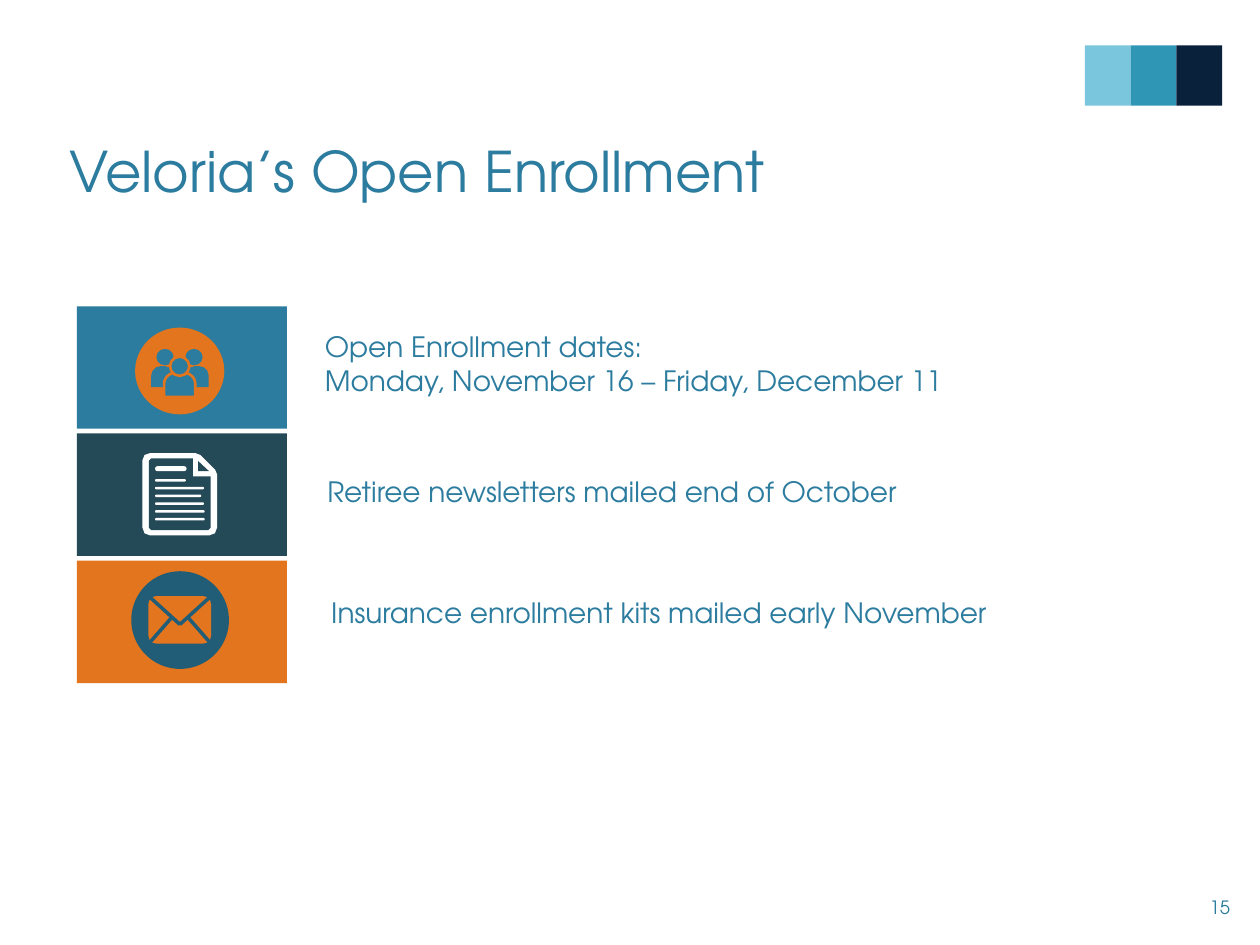
from pptx import Presentation
from pptx.dml.color import RGBColor
from pptx.enum.shapes import MSO_CONNECTOR, MSO_SHAPE
from pptx.enum.text import MSO_ANCHOR, PP_ALIGN
from pptx.oxml.ns import qn
from pptx.util import Pt
from lxml import etree

HUE = {
    "sky": "7AC6DC", "teal": "2F97B5", "navy": "09213B", "blue": "2C7C9F",
    "slate": "244A58", "orange": "E2751D", "deep": "215D77", "white": "FFFFFF",
}
COLOR = {name: RGBColor.from_string(code) for name, code in HUE.items()}

deck = Presentation()
deck.slide_width, deck.slide_height = Pt(720), Pt(540)
slide = deck.slides.add_slide(deck.slide_layouts[6])
shapes = slide.shapes


def paint(shape, fill, line=None):
    shape.shadow.inherit = False
    shape.fill.solid()
    shape.fill.fore_color.rgb = COLOR[fill]
    if line:
        shape.line.color.rgb = COLOR[line]
        shape.line.width = Pt(1.5)
    else:
        shape.line.fill.background()


def write(box, lines, size, anchor=MSO_ANCHOR.TOP, align=PP_ALIGN.LEFT):
    frame = shapes.add_textbox(*map(Pt, box)).text_frame
    frame.word_wrap = True
    frame.vertical_anchor = anchor
    frame.text = "\n".join(lines)
    style = {"name": "TeX Gyre Adventor", "size": Pt(size)}
    for para in frame.paragraphs:
        para.alignment = align
        font = para.runs[0].font
        font.color.rgb = COLOR["blue"]
        for key, value in style.items():
            setattr(font, key, value)


# Corner bars
for i, hue in enumerate(["sky", "teal", "navy"]):
    bar = shapes.add_shape(MSO_SHAPE.RECTANGLE, Pt(619.9 + 26.2 * i), Pt(26),
                           Pt(26.2), Pt(34.4))
    paint(bar, hue)

# Title and page number
write((32.4, 30.2, 535, 90), ["Veloria’s Open Enrollment"], 32, MSO_ANCHOR.BOTTOM)
write((670.3, 504, 39.6, 28.8), ["15"], 10.5, MSO_ANCHOR.MIDDLE, PP_ALIGN.RIGHT)

# Tiles with their messages
rows = [
    ("blue", 178.6, 185, 46, ["Open Enrollment dates:",
                              "Monday, November 16 – Friday, December 11"]),
    ("slate", 180, 267.8, 26.6, ["Retiree newsletters mailed end of October"]),
    ("orange", 182.2, 337, 26.6, ["Insurance enrollment kits mailed early November"]),
]
for i, (hue, left, top, high, lines) in enumerate(rows):
    tile = shapes.add_shape(MSO_SHAPE.RECTANGLE, Pt(44), Pt(175 + 72.7 * i),
                            Pt(120), Pt(70))
    paint(tile, hue)
    write((left, top, 401, high), lines, 16)

# People icon, then the disc and sheet of the envelope icon
OVAL, BODY = MSO_SHAPE.OVAL, MSO_SHAPE.ROUND_2_SAME_RECTANGLE
parts = [
    (OVAL, 77.2, 187.2, 51, 49.6, "orange", None),
    (OVAL, 89.4, 199.4, 9.8, 9.4, "blue", None),
    (OVAL, 106, 199.4, 9.8, 9.4, "blue", None),
    (BODY, 86.4, 209.2, 13, 12, "blue", None),
    (BODY, 106.2, 209.2, 13, 12, "blue", None),
    (BODY, 93.8, 213.2, 17.8, 13.6, "blue", "orange"),
    (OVAL, 97.2, 203.8, 11, 11, "blue", "orange"),
    (OVAL, 75, 326.4, 55.8, 55.8, "deep", None),
    (MSO_SHAPE.ROUNDED_RECTANGLE, 84.8, 340.6, 35.8, 27.2, "orange", None),
]
for kind, left, top, wide, high, fill, line in parts:
    part = shapes.add_shape(kind, *map(Pt, (left, top, wide, high)))
    paint(part, fill, line)
    if kind == BODY:
        part.adjustments[0] = 0.45

# Envelope folds, mirrored about the middle
mid = 102.8
for side in (-1, 1):
    for x1, y1, x2, y2 in [(17.4, 341, 0, 356.8), (17.4, 367.4, 5, 353.2)]:
        fold = shapes.add_connector(MSO_CONNECTOR.STRAIGHT, Pt(mid + side * x1), Pt(y1),
                                    Pt(mid + side * x2), Pt(y2))
        fold.line.color.rgb = COLOR["deep"]
        fold.line.width = Pt(2)
        etree.SubElement(fold._element.spPr, qn("a:effectLst"))

# Newsletter page: sheet, inside and folded corner
outlines = [
    ("white", [(85.6, 259), (111.8, 259), (114.4, 260), (123, 268.6), (124, 271),
               (124, 301.6), (122.8, 304.8), (119.4, 306), (85.8, 306),
               (82.6, 304.8), (81.4, 301.6), (81.4, 263), (82.6, 260)]),
    ("slate", [(86.4, 262), (110.2, 262), (110.2, 272.2), (120.4, 272.2),
               (120.4, 301.6), (119, 303), (86.4, 303), (85, 301.6), (85, 263.4)]),
    ("slate", [(113.2, 263.4), (119.4, 269.2), (113.2, 269.2)]),
]
for fill, dots in outlines:
    (x, y), *rest = [(Pt(x), Pt(y)) for x, y in dots]
    path = shapes.build_freeform(x, y)
    path.add_line_segments(rest)
    paint(path.convert_to_shape(), fill)

# Lines of print on the page
prints = [(266.4, 18, 2.8), (273.8, 17.6, 1.4)]
prints += [(278.2 + 4.45 * i, wide, 1.4) for i, wide in enumerate([28, 26.4, 28, 28.4, 28.4])]
for top, wide, high in prints:
    row = shapes.add_shape(MSO_SHAPE.ROUNDED_RECTANGLE, Pt(88.6), Pt(top), Pt(wide), Pt(high))
    row.adjustments[0] = 0.5
    paint(row, "white")

deck.save("out.pptx")
